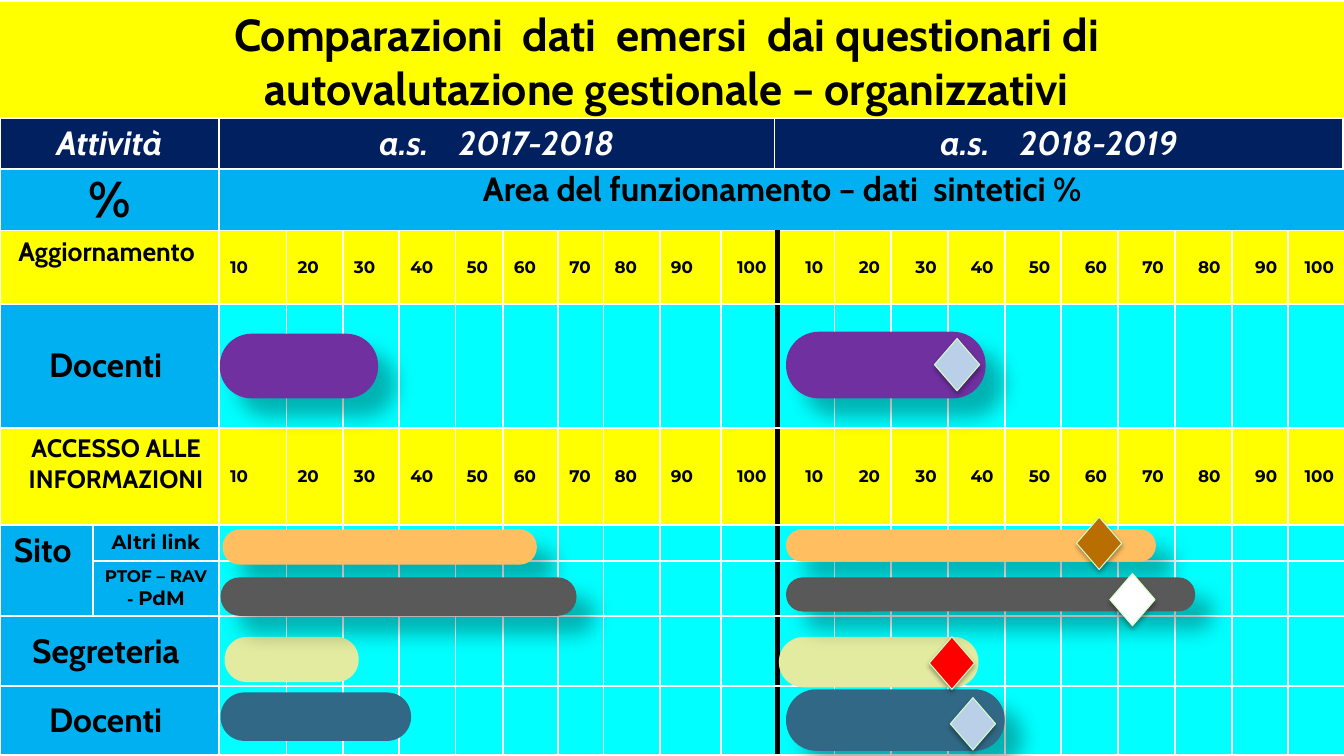
import pptx
import pptx.dml.color
import pptx.enum.shapes
import pptx.enum.text
import pptx.oxml
import pptx.oxml.ns
import pptx.util

Cm = pptx.util.Cm
Pt = pptx.util.Pt
RGBColor = pptx.dml.color.RGBColor
Shape = pptx.enum.shapes.MSO_SHAPE
Align = pptx.enum.text.PP_ALIGN
Anchor = pptx.enum.text.MSO_ANCHOR

BLACK = RGBColor(0x00, 0x00, 0x00)
WHITE = RGBColor(0xFF, 0xFF, 0xFF)
YELLOW = RGBColor(0xFF, 0xFF, 0x00)
NAVY = RGBColor(0x00, 0x20, 0x60)
BLUE = RGBColor(0x00, 0xB0, 0xF0)
CYAN = RGBColor(0x00, 0xFF, 0xFF)
PURPLE = RGBColor(0x70, 0x30, 0xA0)
ORANGE = RGBColor(0xFF, 0xBF, 0x61)
GREY = RGBColor(0x59, 0x59, 0x59)
LIME = RGBColor(0xE2, 0xEB, 0xA0)
TEAL = RGBColor(0x31, 0x68, 0x86)
PALE_BLUE = RGBColor(0xBA, 0xCF, 0xE8)
BROWN = RGBColor(0xB8, 0x6E, 0x00)
RED = RGBColor(0xFF, 0x00, 0x00)
PALE_GREEN = RGBColor(0xD3, 0xFF, 0xC7)

HEADING_FONT = "Cabin"
SCALE_FONT = "Montserrat"
PAGE_WIDTH = 33.87
LABEL_WIDTHS = [2.34, 3.18]
FIRST_YEAR_WIDTHS = [1.7, 1.42, 1.42, 1.42, 1.19, 1.4, 1.14, 1.42, 1.55, 1.42]
SECOND_YEAR_WIDTHS = [1.43] * 10
ROW_HEIGHTS = [1.55, 1.85, 3.12, 2.44, 0.91, 1.4, 1.75, 1.75]
SCALE_ROWS = (1, 3)
FIRST_SCALE_COLUMN = 2
LAST_FIRST_YEAR_COLUMN = 11

# left, top, width, height, colour, has shadow
BARS = [
    (19.81, 8.36, 5.03, 1.68, PURPLE, True),
    (5.54, 8.41, 3.99, 1.63, PURPLE, True),
    (19.81, 13.34, 9.32, 0.81, ORANGE, True),
    (5.61, 13.34, 7.92, 0.89, ORANGE, True),
    (19.63, 16.05, 5.03, 1.27, LIME, False),
    (5.66, 16.05, 3.38, 1.14, LIME, False),
    (19.81, 17.37, 5.51, 1.55, TEAL, True),
    (5.56, 17.45, 4.8, 1.22, TEAL, False),
    (19.81, 14.55, 10.31, 0.86, GREY, True),
    (5.56, 14.55, 8.97, 0.97, GREY, True),
]
# left, top, colour
DIAMONDS = [
    (23.55, 8.53, PALE_BLUE),
    (27.13, 13.03, BROWN),
    (23.42, 16.05, RED),
    (23.95, 17.58, PALE_BLUE),
    (27.97, 14.45, WHITE),
]


class Builder:
    def __init__(self, page):
        self.page = page

    def style(self, paragraph, size, color=BLACK, font=HEADING_FONT, italic=False, align=Align.CENTER):
        paragraph.alignment = align
        paragraph.font.size = Pt(size)
        paragraph.font.name = font
        paragraph.font.bold = True
        paragraph.font.italic = italic
        paragraph.font.color.rgb = color

    def title(self, text, top, height):
        box = self.page.shapes.title
        box.left, box.top, box.width, box.height = Cm(0), Cm(top), Cm(PAGE_WIDTH), Cm(height)
        box.fill.solid()
        box.fill.fore_color.rgb = YELLOW
        box.text_frame.text = text
        box.text_frame.vertical_anchor = Anchor.MIDDLE
        self.style(box.text_frame.paragraphs[0], 32)

    def table(self, top, widths, heights):
        frame = self.page.shapes.add_table(len(heights), len(widths), Cm(0), Cm(top),
                                           Cm(sum(widths)), Cm(sum(heights)))
        table = frame.table
        table.first_row = table.horz_banding = False
        for column, width in zip(table.columns, widths):
            column.width = Cm(width)
        for row, height in zip(table.rows, heights):
            row.height = Cm(height)
        return table

    def fill_cell(self, cell, color, heavy_side=None):
        """Fill a cell and line it in white, with one side optionally thick and black."""
        cell.fill.solid()
        cell.fill.fore_color.rgb = color
        self.margins(cell, 0, 0)
        properties = cell._tc.get_or_add_tcPr()
        for index, side in enumerate("LRTB"):
            line_color, width = (BLACK, 4.5) if side == heavy_side else (WHITE, 1.5)
            properties.insert(index, pptx.oxml.parse_xml(
                f'<a:ln{side} {pptx.oxml.ns.nsdecls("a")} w="{Pt(width)}"><a:solidFill>'
                f'<a:srgbClr val="{line_color}"/></a:solidFill></a:ln{side}>'))

    def margins(self, cell, side, edge):
        cell.margin_left = cell.margin_right = Cm(side)
        cell.margin_top = cell.margin_bottom = Cm(edge)

    def label_cell(self, cell, text, size, anchor=Anchor.TOP, **looks):
        cell.text = text
        cell.vertical_anchor = anchor
        self.margins(cell, 0.28, 0.14)
        for paragraph in cell.text_frame.paragraphs:
            self.style(paragraph, size, **looks)

    def shape(self, kind, left, top, width, height, color, shadow=None):
        """Add a filled shape; shadow is opacity %, blur pt, distance pt, angle."""
        shape = self.page.shapes.add_shape(kind, Cm(left), Cm(top), Cm(width), Cm(height))
        shape.fill.solid()
        shape.fill.fore_color.rgb = color
        shape.line.fill.background()
        shape.shadow.inherit = False
        if shadow:
            opacity, blur, distance, angle = shadow
            effects = shape._element.spPr.find(pptx.oxml.ns.qn("a:effectLst"))
            effects.append(pptx.oxml.parse_xml(
                f'<a:outerShdw {pptx.oxml.ns.nsdecls("a")} blurRad="{Pt(blur)}" '
                f'dist="{Pt(distance)}" dir="{angle * 60000}" rotWithShape="0">'
                f'<a:srgbClr val="{BLACK}"><a:alpha val="{opacity * 1000}"/></a:srgbClr></a:outerShdw>'))
        return shape

    def bar(self, left, top, width, height, color, has_shadow):
        shadow = (30, 15, 18, 45) if has_shadow else None
        bar = self.shape(Shape.ROUNDED_RECTANGLE, left, top, width, height, color, shadow)
        bar.adjustments[0] = 0.49

    def diamond(self, left, top, color):
        diamond = self.shape(Shape.FLOWCHART_DECISION, left, top, 1.14, 1.32, color, (32, 3.5, 2.2, 90))
        diamond.line.color.rgb = PALE_GREEN
        diamond.line.width = Pt(0.75)


def add_year_header(builder):
    widths = [sum(LABEL_WIDTHS), 14, 14.33]
    table = builder.table(2.97, widths, [1.27])
    for column, text in enumerate(["Attività", "a.s.    2017-2018", "a.s.    2018-2019"]):
        cell = table.cell(0, column)
        builder.fill_cell(cell, NAVY)
        builder.label_cell(cell, text, 24, color=WHITE, italic=True)


def add_percent_grid(builder):
    widths = LABEL_WIDTHS + FIRST_YEAR_WIDTHS + SECOND_YEAR_WIDTHS
    table = builder.table(4.26, widths, ROW_HEIGHTS)
    heavy_sides = {LAST_FIRST_YEAR_COLUMN: "R", LAST_FIRST_YEAR_COLUMN + 1: "L"}
    for row in range(len(ROW_HEIGHTS)):
        for column in range(len(widths)):
            is_label = row == 0 or column < FIRST_SCALE_COLUMN
            color = YELLOW if row in SCALE_ROWS else BLUE if is_label else CYAN
            builder.fill_cell(table.cell(row, column), color, heavy_sides.get(column) if row else None)

    for row in SCALE_ROWS:
        for step in range(20):
            column = FIRST_SCALE_COLUMN + step
            align = Align.LEFT if column < LAST_FIRST_YEAR_COLUMN else Align.RIGHT
            builder.label_cell(table.cell(row, column), str(step % 10 * 10 + 10), 12, Anchor.MIDDLE,
                               font=SCALE_FONT, align=align)

    for row in (0, 1, 2, 3, 6, 7):
        table.cell(row, 0).merge(table.cell(row, 1))
    table.cell(0, FIRST_SCALE_COLUMN).merge(table.cell(0, len(widths) - 1))
    table.cell(4, 0).merge(table.cell(5, 0))

    labels = [
        (0, 0, "%", 36, Anchor.MIDDLE),
        (0, 2, "Area del funzionamento – dati  sintetici %", 24, Anchor.TOP),
        (1, 0, "Aggiornamento ", 19, Anchor.TOP),
        (2, 0, "Docenti ", 24, Anchor.MIDDLE),
        (3, 0, "ACCESSO ALLE\nINFORMAZIONI", 18, Anchor.TOP),
        (4, 0, "Sito ", 24, Anchor.TOP),
        (6, 0, "Segreteria ", 24, Anchor.MIDDLE),
        (7, 0, "Docenti ", 24, Anchor.MIDDLE),
    ]
    for row, column, text, size, anchor in labels:
        cell = table.cell(row, column)
        builder.label_cell(cell, text, size, anchor)
        if row == 0:
            builder.margins(cell, 0, 0)
    table.cell(3, 0).margin_left = Cm(0.61)
    builder.label_cell(table.cell(4, 1), "Altri link", 14, font=SCALE_FONT)
    plans = table.cell(5, 1)
    builder.label_cell(plans, "PTOF – RAV - ", 12, font=SCALE_FONT)
    span = plans.text_frame.paragraphs[0].add_run()
    span.text = "PdM"
    span.font.size = Pt(14)


def main():
    deck = pptx.Presentation()
    deck.slide_width, deck.slide_height = Cm(PAGE_WIDTH), Cm(19.05)
    builder = Builder(deck.slides.add_slide(deck.slide_layouts[5]))
    builder.title("Comparazioni  dati  emersi  dai questionari di \v"
                  "autovalutazione gestionale – organizzativi ", 0.05, 2.95)
    add_year_header(builder)
    add_percent_grid(builder)
    for bar in BARS:
        builder.bar(*bar)
    for diamond in DIAMONDS:
        builder.diamond(*diamond)
    deck.save("out.pptx")


if __name__ == "__main__":
    main()
